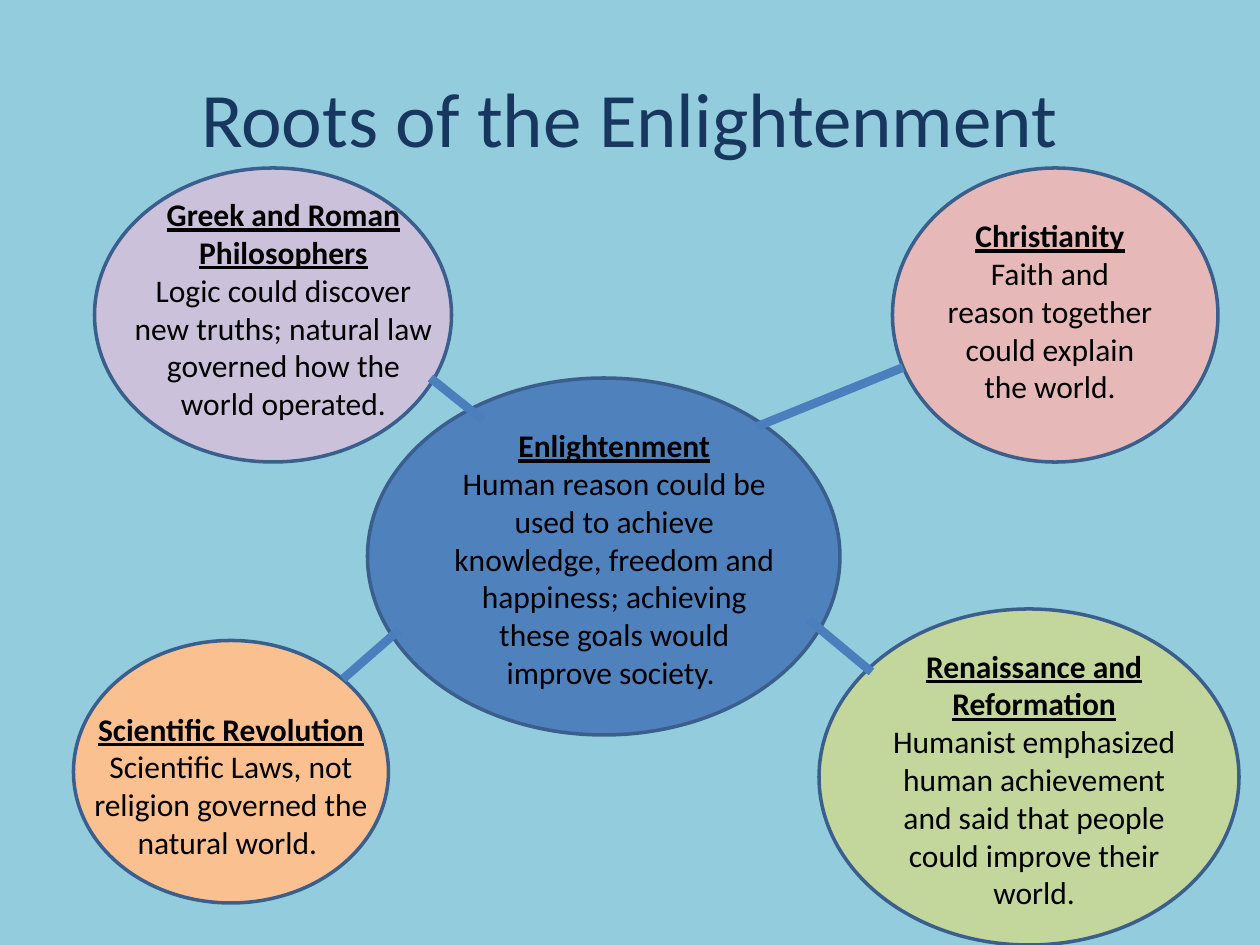
"""Build the concept map of the roots of the Enlightenment."""
from typing import NamedTuple

import pptx
import pptx.dml.color
import pptx.enum.shapes
import pptx.enum.text
import pptx.oxml
import pptx.oxml.ns
import pptx.slide
import pptx.text.text
import pptx.util

Pt = pptx.util.Pt
RGBColor = pptx.dml.color.RGBColor

SKY = RGBColor(0x93, 0xCD, 0xDD)
NAVY = RGBColor(0x17, 0x37, 0x5E)
BLACK = RGBColor(0x00, 0x00, 0x00)
OUTLINE = RGBColor(0x3A, 0x5F, 0x8C)
LINK = RGBColor(0x4B, 0x7E, 0xBC)
BLUE = RGBColor(0x4F, 0x81, 0xBD)
ROSE = RGBColor(0xE6, 0xB9, 0xB8)
GREEN = RGBColor(0xC3, 0xD6, 0x9B)
LILAC = RGBColor(0xCC, 0xC1, 0xDA)
ORANGE = RGBColor(0xFA, 0xC0, 0x90)

TITLE_FONT = {"name": "Calibri", "size": Pt(44)}
BODY_FONT = {"name": "Calibri", "size": Pt(18), "bold": False, "underline": False}
HEADING_FONT = BODY_FONT | {"bold": True, "underline": True}


class Box(NamedTuple):
    """Left, top, width and height in points."""

    left: float
    top: float
    width: float
    height: float

    def lengths(self) -> list[pptx.util.Length]:
        """Return the four values as lengths."""
        return [Pt(value) for value in self]


class Idea(NamedTuple):
    """An ellipse with a heading and an explanation over it."""

    heading: str
    explanation: str
    fill: RGBColor
    ellipse: Box
    caption: Box


class Link(NamedTuple):
    """A straight link between two points."""

    start_x: float
    start_y: float
    end_x: float
    end_y: float


IDEAS = [
    Idea("Enlightenment",
         "Human reason could be used to achieve knowledge, freedom and happiness; "
         "achieving these goals would improve society. ",
         BLUE, Box(210, 216, 270, 204), Box(252, 240, 198, 160)),
    Idea("Christianity",
         "Faith and reason together could explain the world.",
         ROSE, Box(510, 96, 186, 168), Box(534, 120, 132, 116.5)),
    Idea("Renaissance and Reformation",
         "Humanist emphasized human achievement and said that people could "
         "improve their world.",
         GREEN, Box(468, 348, 240, 192), Box(498, 366, 186, 160)),
    Idea("Greek and Roman Philosophers",
         "Logic could discover new truths; natural law governed how the world "
         "operated.",
         LILAC, Box(54, 96, 204, 168), Box(66, 108, 192, 138)),
    Idea("Scientific Revolution",
         "Scientific Laws, not religion governed the natural world. ",
         ORANGE, Box(42, 366, 180, 150), Box(42, 402, 180, 94.5)),
]

LINKS = [
    Link(196, 388, 228, 360),
    Link(432, 244, 516, 210),
    Link(276, 240, 246, 216),
    Link(498, 384, 462, 354),
]


def write(paragraph: pptx.text.text._Paragraph, words: str,
          font: dict, color: RGBColor) -> None:
    """Write centred words with the given font values."""
    paragraph.alignment = pptx.enum.text.PP_ALIGN.CENTER
    run = paragraph.add_run()
    run.text = words
    for name, value in font.items():
        setattr(run.font, name, value)
    run.font.color.rgb = color


def add_frame(slide: pptx.slide.Slide, box: Box) -> pptx.text.text.TextFrame:
    """Add a wrapping text box and return its frame."""
    frame = slide.shapes.add_textbox(*box.lengths()).text_frame
    frame.word_wrap = True
    return frame


def draw_title(slide: pptx.slide.Slide) -> None:
    """Draw the slide title."""
    title = add_frame(slide, Box(36, 21.6, 648, 90))
    title.vertical_anchor = pptx.enum.text.MSO_ANCHOR.MIDDLE
    write(title.paragraphs[0], "Roots of the Enlightenment", TITLE_FONT, NAVY)


def draw_idea(slide: pptx.slide.Slide, idea: Idea) -> None:
    """Draw an ellipse and its caption."""
    ellipse = slide.shapes.add_shape(
        pptx.enum.shapes.MSO_SHAPE.OVAL, *idea.ellipse.lengths())
    ellipse.shadow.inherit = False
    ellipse.fill.solid()
    ellipse.fill.fore_color.rgb = idea.fill
    ellipse.line.color.rgb = OUTLINE
    ellipse.line.width = Pt(2)

    caption = add_frame(slide, idea.caption)
    caption.auto_size = pptx.enum.text.MSO_AUTO_SIZE.SHAPE_TO_FIT_TEXT
    write(caption.paragraphs[0], idea.heading, HEADING_FONT, BLACK)
    write(caption.add_paragraph(), idea.explanation, BODY_FONT, BLACK)


def draw_link(slide: pptx.slide.Slide, link: Link) -> None:
    """Draw a thick line without a shadow."""
    line = slide.shapes.add_connector(
        pptx.enum.shapes.MSO_CONNECTOR.STRAIGHT, *[Pt(value) for value in link])
    line.line.color.rgb = LINK
    line.line.width = Pt(5)
    line._element.spPr.append(
        pptx.oxml.parse_xml(f"<a:effectLst {pptx.oxml.ns.nsdecls('a')}/>"))


def main() -> None:
    """Build and save the slide."""
    deck = pptx.Presentation()
    deck.slide_width, deck.slide_height = Pt(720), Pt(540)
    slide = deck.slides.add_slide(deck.slide_layouts[6])
    slide.background.fill.solid()
    slide.background.fill.fore_color.rgb = SKY
    draw_title(slide)
    for idea in IDEAS:
        draw_idea(slide, idea)
    for link in LINKS:
        draw_link(slide, link)
    deck.save("out.pptx")


if __name__ == "__main__":
    main()
